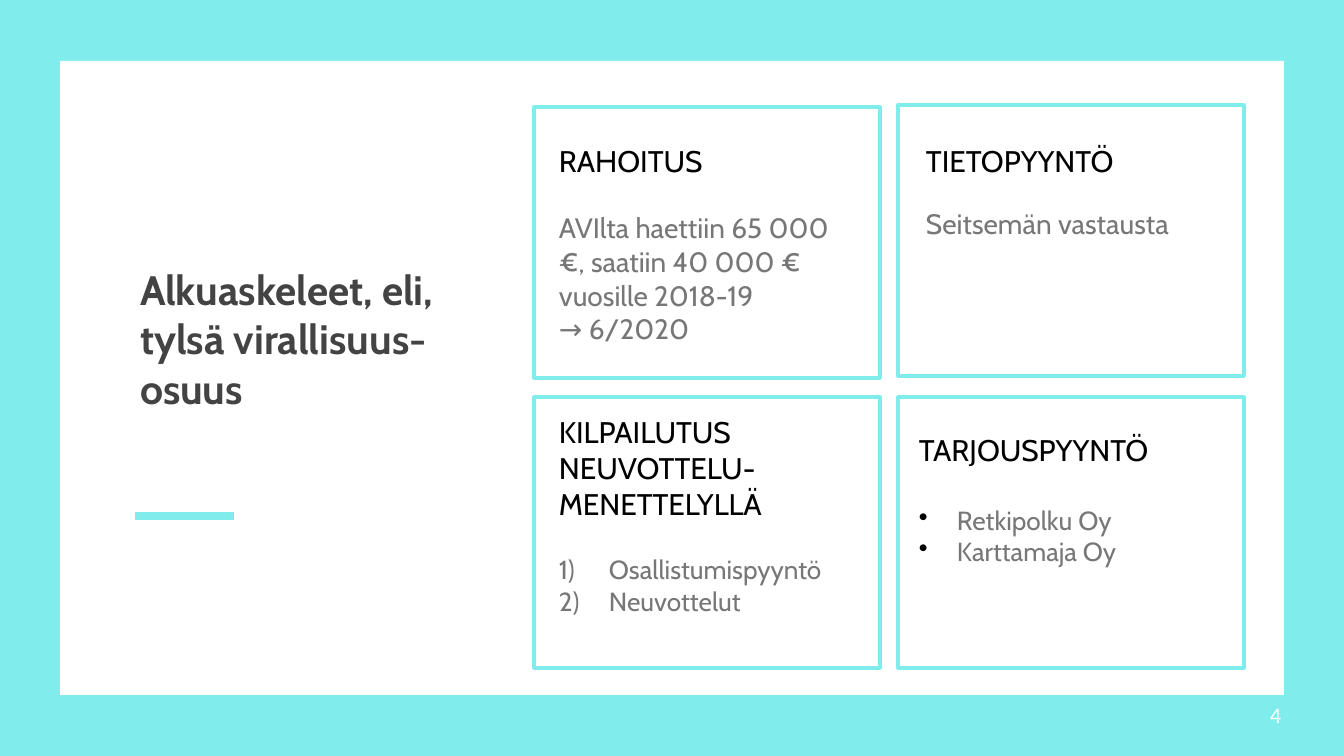
import lxml.etree
import pptx
import pptx.dml.color
import pptx.enum.shapes
import pptx.enum.text
import pptx.oxml.ns
import pptx.util

EMU_PER_PX = 914400 / 100.8
COLORS = {
    "aqua": "81ECEC",
    "panel": "FFFFFF",
    "title": "434343",
    "heading": "000000",
    "body": "777777",
}
CARD_WIDTH, CARD_HEIGHT = 346, 271


def px(length):
    return pptx.util.Emu(round(length * EMU_PER_PX))


def rgb(name):
    return pptx.dml.color.RGBColor.from_string(COLORS[name])


class SlideBuilder:
    font = "Cabin"
    inset = 13

    def __init__(self, deck):
        title_only = deck.slide_layouts[5]
        self.slide = deck.slides.add_slide(title_only)

    def background(self, color):
        fill = self.slide.background.fill
        fill.solid()
        fill.fore_color.rgb = rgb(color)

    def rectangle(self, left, top, width, height, fill=None, outline=None):
        rect = self.slide.shapes.add_shape(
            pptx.enum.shapes.MSO_SHAPE.RECTANGLE,
            px(left), px(top), px(width), px(height))
        rect.shadow.inherit = False
        if fill:
            rect.fill.solid()
            rect.fill.fore_color.rgb = rgb(fill)
        else:
            rect.fill.background()
        if outline:
            rect.line.color.rgb = rgb(outline)
            rect.line.width = pptx.util.Pt(2.25)
        else:
            rect.line.fill.background()

    def rule(self, left, right, y, color, weight):
        line = self.slide.shapes.add_connector(
            pptx.enum.shapes.MSO_CONNECTOR.STRAIGHT,
            px(left), px(y), px(right), px(y))
        line.line.color.rgb = rgb(color)
        line.line.width = pptx.util.Pt(weight)
        properties = line.element.find(pptx.oxml.ns.qn("p:spPr"))
        lxml.etree.SubElement(properties, pptx.oxml.ns.qn("a:effectLst"))

    def frame(self, shape, middle=False):
        """Give a shape's text frame the common insets, wrapping and anchor."""
        text = shape.text_frame
        text.word_wrap = True
        text.auto_size = pptx.enum.text.MSO_AUTO_SIZE.NONE
        anchors = pptx.enum.text.MSO_ANCHOR
        text.vertical_anchor = anchors.MIDDLE if middle else anchors.TOP
        text.margin_left = text.margin_right = px(self.inset)
        text.margin_top = text.margin_bottom = px(self.inset)
        return text

    def run(self, paragraph, wording, size, color, font=None, bold=False):
        paragraph.alignment = pptx.enum.text.PP_ALIGN.LEFT
        run = paragraph.add_run()
        run.text = wording
        run.font.name = font or self.font
        run.font.size = pptx.util.Pt(size)
        run.font.bold = bold
        run.font.color.rgb = rgb(color)

    def title(self, left, top, width, height, lines):
        heading = self.slide.shapes.title
        heading.left, heading.top = px(left), px(top)
        heading.width, heading.height = px(width), px(height)
        paragraph = self.frame(heading, middle=True).paragraphs[0]
        for number, line in enumerate(lines):
            if number:
                paragraph.add_line_break()
            self.run(paragraph, line, 29.3, "title", bold=True)
        # The placeholder comes first, so lift it above the white panel.
        heading.element.getparent().append(heading.element)

    def textbox(self, left, top, width, height, middle=False):
        box = self.slide.shapes.add_textbox(
            px(left), px(top), px(width), px(height))
        return self.frame(box, middle)

    def bullet(self, paragraph, marker, indent, color):
        """Hang the paragraph after "•" or, for "1)", an automatic number."""
        qn = pptx.oxml.ns.qn
        properties = paragraph._p.get_or_add_pPr()
        properties.set("marL", str(px(indent)))
        properties.set("indent", str(-px(indent)))
        tint = lxml.etree.SubElement(properties, qn("a:buClr"))
        lxml.etree.SubElement(tint, qn("a:srgbClr"), val=COLORS[color])
        if marker == "1)":
            lxml.etree.SubElement(
                properties, qn("a:buAutoNum"), type="arabicParenR")
        else:
            lxml.etree.SubElement(properties, qn("a:buChar"), char=marker)

    def card_text(self, box, heading, gap, items, size, bullet=None):
        """Write a heading and, gap points below it, the items."""
        text = self.textbox(*box)
        self.run(text.paragraphs[0], heading, 21.3, "heading")
        for number, item in enumerate(items):
            paragraph = text.add_paragraph()
            paragraph.space_before = pptx.util.Pt(0 if number else gap)
            self.run(paragraph, item, size, "body")
            if bullet:
                self.bullet(paragraph, *bullet)

    def slide_number(self, left, top, width, height, number):
        text = self.textbox(left, top, width, height, middle=True)
        self.run(text.paragraphs[0], number, 16, "panel", font="Calibri")


def main():
    deck = pptx.Presentation()
    deck.slide_width, deck.slide_height = px(1344), px(756)
    page = SlideBuilder(deck)
    page.background("aqua")
    page.rectangle(60, 61, 1224, 634, fill="panel")
    page.rule(135, 234, 516, "aqua", 6)

    for left, top in [(534, 107), (898, 105), (534, 397), (898, 397)]:
        page.rectangle(left, top, CARD_WIDTH, CARD_HEIGHT, outline="aqua")

    page.card_text(
        (546, 130, 318, 231), "RAHOITUS", 23,
        ["AVIlta haettiin 65 000 €, saatiin 40 000 € vuosille 2018-19",
         "→ 6/2020"], 20)
    page.card_text(
        (913, 130, 304, 210), "TIETOPYYNTÖ", 19.5,
        ["Seitsemän vastausta"], 20)
    page.card_text(
        (546, 401, 310, 267), "KILPAILUTUS NEUVOTTELU-MENETTELYLLÄ", 23,
        ["Osallistumispyyntö", "Neuvottelut"], 18.7, ("1)", 50, "body"))
    page.card_text(
        (906, 419, 332, 227), "TARJOUSPYYNTÖ", 26,
        ["Retkipolku Oy", "Karttamaja Oy"], 18.7, ("•", 38, "heading"))

    page.slide_number(1257, 686, 80, 57, "4")
    page.title(127, 203, 374, 271,
               ["Alkuaskeleet, eli,", "tylsä virallisuus-osuus"])
    deck.save("out.pptx")


if __name__ == "__main__":
    main()
